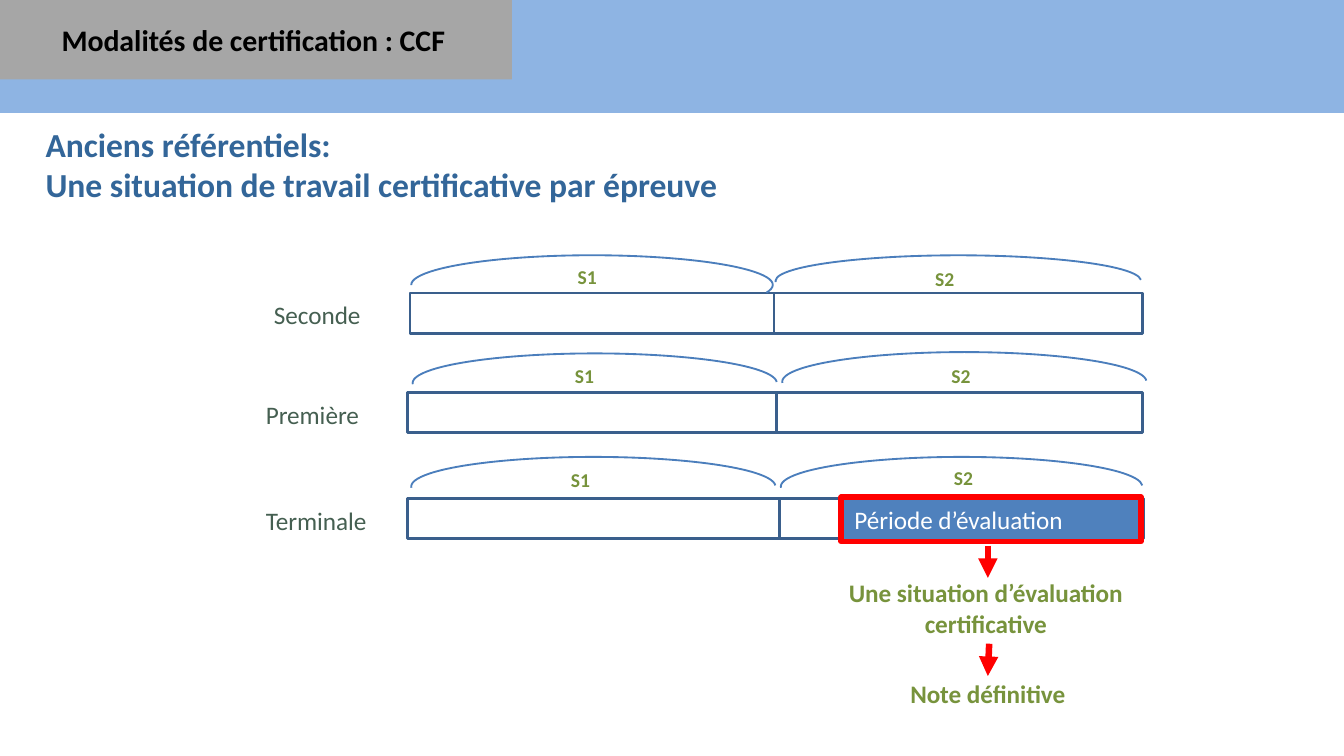
from pptx import Presentation
from pptx.dml.color import RGBColor
from pptx.enum.shapes import MSO_CONNECTOR as CONN, MSO_SHAPE as SHAPE
from pptx.enum.text import MSO_ANCHOR as ANCHOR, PP_ALIGN as ALIGN
from pptx.oxml.ns import qn
from pptx.util import Inches, Pt
from lxml import etree

COLORS = {
    "band": "8EB4E3", "tab": "A6A6A6", "black": "000000", "title": "336699",
    "white": "FFFFFF", "border": "3A5F8C", "arc": "4B7EBC", "label": "455F51",
    "green": "77933C", "period": "4F81BD", "red": "FF0000",
}
BAR_H = 0.3
FULL_ARC = (107.757, 215.8)
SHORT_ARC = (107.964, 1.537)

# Label and its place, bar top, left edges and end of the two semesters,
# arcs (box, angles), semester label boxes
YEARS = [
    ("Seconde", (1.94, 1.18), 2.18, (3.05, 5.76, 8.5),
     [((3.06, 1.9, 2.69, 0.44), SHORT_ARC), ((5.77, 1.9, 2.72, 0.38), FULL_ARC)],
     [(4.2, 1.92, 0.7, 0.28), (6.86, 1.94, 0.52, 0.28)]),
    ("Première", (1.88, 1.25), 2.92, (3.03, 5.78, 8.5),
     [((3.07, 2.63, 2.71, 0.44), FULL_ARC), ((5.82, 2.62, 2.71, 0.44), FULL_ARC)],
     [(4.18, 2.66, 0.53, 0.28), (6.98, 2.66, 0.68, 0.28)]),
    ("Terminale", (1.88, 1.09), 3.71, (3.03, 5.8, 8.51),
     [((3.06, 3.4, 2.71, 0.44), FULL_ARC), ((5.81, 3.4, 2.69, 0.44), FULL_ARC)],
     [(4.15, 3.43, 0.44, 0.45), (7, 3.42, 0.44, 0.45)]),
]


def rgb(name):
    return RGBColor.from_string(COLORS[name])


def write(sp, lines, size, color, bold=False, align=ALIGN.LEFT):
    tf = sp.text_frame
    tf.word_wrap = True
    for i, line in enumerate(lines):
        p = tf.paragraphs[0] if i == 0 else tf.add_paragraph()
        p.text = line
        p.alignment = align
        p.font.name = "Calibri"
        p.font.size = Pt(size)
        p.font.bold = bold
        p.font.color.rgb = rgb(color)


def add_text(s, box, lines, size, color, bold=False, align=ALIGN.LEFT):
    sp = s.shapes.add_textbox(*map(Inches, box))
    write(sp, lines, size, color, bold, align)


def add_shape(s, kind, box, fill=None, line=None, width=1.5):
    sp = s.shapes.add_shape(kind, *map(Inches, box))
    sp.shadow.inherit = False
    if fill:
        sp.fill.solid()
        sp.fill.fore_color.rgb = rgb(fill)
    else:
        sp.fill.background()
    if line:
        sp.line.color.rgb = rgb(line)
        sp.line.width = Pt(width)
    else:
        sp.line.fill.background()
    return sp


def add_arc(s, box, angles):
    sp = add_shape(s, SHAPE.ARC, box, line="arc", width=1)
    for i, angle in enumerate(angles):
        sp.adjustments[i] = angle


def add_arrow(s, start, end):
    cx = s.shapes.add_connector(CONN.STRAIGHT, *map(Inches, start + end))
    cx.line.color.rgb = rgb("red")
    cx.line.width = Pt(3.5)
    etree.SubElement(cx.get_or_add_ln(), qn("a:tailEnd"), type="triangle")
    etree.SubElement(cx.element.spPr, qn("a:effectLst"))


def add_year(s, name, place, top, edges, arcs, semesters):
    for left, right in zip(edges, edges[1:]):
        add_shape(s, SHAPE.RECTANGLE, (left, top, right - left, BAR_H), "white", "border")
    left, width = place
    add_text(s, (left, top, width, 0.33), [name], 13.5, "label")
    for box, angles in arcs:
        add_arc(s, box, angles)
    for n, box in enumerate(semesters, 1):
        add_text(s, box, [f"S{n}"], 10.5, "green", True)


def add_evaluation(s):
    period = add_shape(s, SHAPE.RECTANGLE, (6.26, 3.7, 2.23, 0.33), "period", "red", 3)
    period.text_frame.vertical_anchor = ANCHOR.MIDDLE
    write(period, ["Période d’évaluation"], 13.5, "white")
    add_text(s, (5.82, 4.25, 3.03, 0.56), ["Une situation d’évaluation certificative"],
             13.5, "green", True, ALIGN.CENTER)
    add_text(s, (6.48, 5, 1.74, 0.33), ["Note définitive"],
             13.5, "green", True, ALIGN.CENTER)
    add_arrow(s, (7.35, 4.06), (7.35, 4.3))
    add_arrow(s, (7.36, 4.79), (7.35, 5.03))


def main():
    # Widescreen slide, 16:9
    prs = Presentation()
    prs.slide_width = Inches(10)
    prs.slide_height = Inches(10 * 9 / 16)
    s = prs.slides.add_slide(prs.slide_layouts[6])

    # Header band and title
    add_shape(s, SHAPE.RECTANGLE, (0, 0, 10, 0.84), "band")
    add_shape(s, SHAPE.RECTANGLE, (0, 0, 3.81, 0.59), "tab")
    add_text(s, (0.36, 0.11, 3.1, 0.37), ["Modalités de certification : CCF"],
             16, "black", True)
    add_text(s, (0.24, 0.87, 5.25, 0.71),
             ["Anciens référentiels:", "Une situation de travail certificative par épreuve"],
             18, "title", True)

    # School years, then the evaluation period in the last one
    for year in YEARS:
        add_year(s, *year)
    add_evaluation(s)

    prs.save("out.pptx")


if __name__ == "__main__":
    main()
